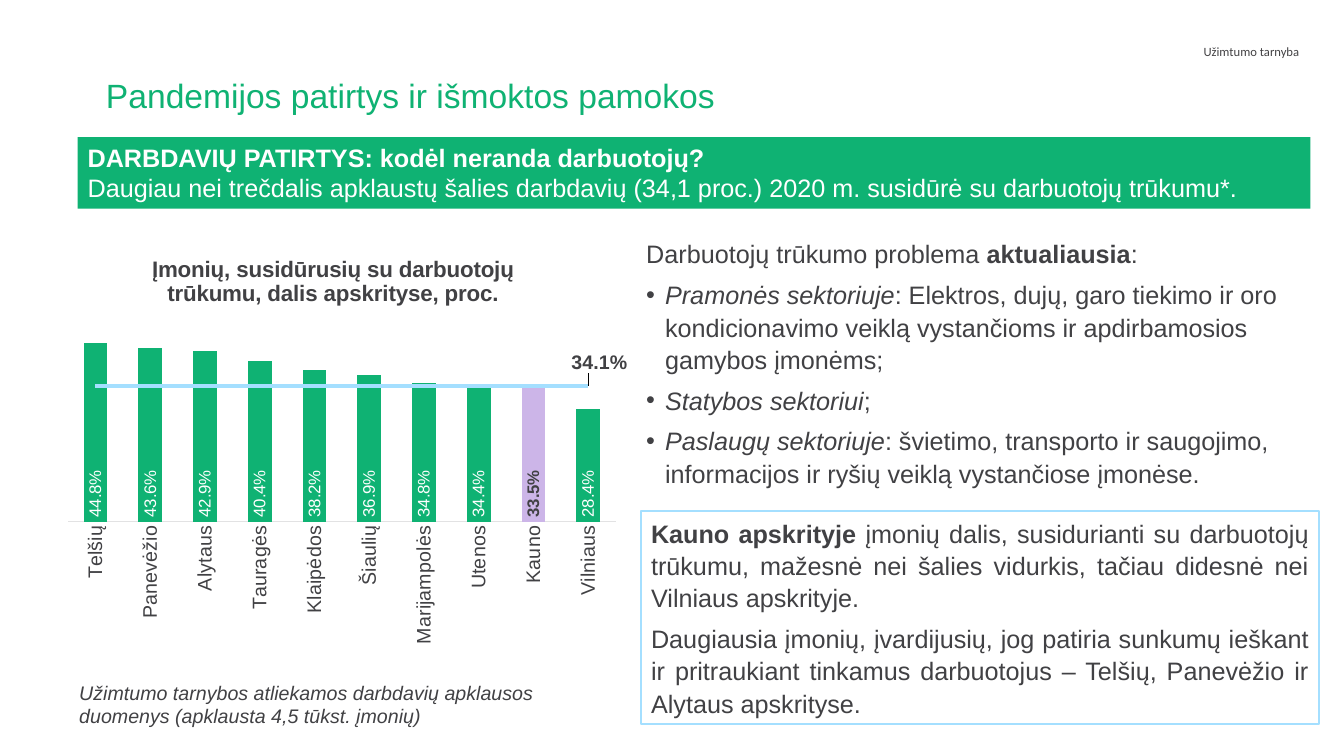
import lxml.etree
import pptx
import pptx.chart.data
import pptx.dml.color
import pptx.enum.chart
import pptx.enum.shapes
import pptx.enum.text
import pptx.oxml
import pptx.oxml.ns
import pptx.util

Pt = pptx.util.Pt
qn = pptx.oxml.ns.qn
ALIGN = pptx.enum.text.PP_ALIGN

GREEN, BLUE, LILAC = "0FB273", "A4DFFF", "CCB5E8"
TEXT, WHITE, AXIS = "414144", "FFFFFF", "E2E2E3"

COUNTIES = ["Telšių", "Panevėžio", "Alytaus", "Tauragės", "Klaipėdos",
            "Šiaulių", "Marijampolės", "Utenos", "Kauno", "Vilniaus"]
SHARES = [0.448, 0.436, 0.429, 0.404, 0.382, 0.369, 0.348, 0.344, 0.335, 0.284]
AVERAGE = 0.341
KAUNAS = COUNTIES.index("Kauno")


def color(value):
    return pptx.dml.color.RGBColor.from_string(value)


def chart_xml(content):
    """Build a chart element, with its namespaces declared."""
    name, rest = content[1:].split(">", 1)
    return pptx.oxml.parse_xml(f"<{name} {pptx.oxml.ns.nsdecls('c', 'a')}>{rest}")


def box_xml(line):
    """White fill with the given outline content."""
    return chart_xml(f'<c:spPr><a:solidFill><a:srgbClr val="{WHITE}"/></a:solidFill>'
                     f'<a:ln>{line}</a:ln></c:spPr>')


def layout_xml(x, y, size=None, edge=True):
    """Manual chart layout, as fractions of the chart."""
    parts = '<c:layoutTarget val="inner"/>' if size else ""
    if edge:
        parts += '<c:xMode val="edge"/><c:yMode val="edge"/>'
    parts += f'<c:x val="{x}"/><c:y val="{y}"/>'
    if size:
        parts += f'<c:w val="{size[0]}"/><c:h val="{size[1]}"/>'
    return chart_xml(f"<c:layout><c:manualLayout>{parts}</c:manualLayout></c:layout>")


def remove_children(element, tag):
    for child in element.findall(qn(tag)):
        element.remove(child)


def turn_text(element):
    for body in element.xpath(".//a:bodyPr"):
        body.set("rot", "-5400000")
        body.set("vert", "horz")


class SlideBuilder:
    """Holds the text style and the current slide."""

    def __init__(self, slide, font="Arial", size=18):
        self.slide, self.font, self.size = slide, font, size

    def style(self, font, size=None, hue=TEXT, bold=False, italic=False, name=None):
        font.name = name or self.font
        font.size = Pt(size or self.size)
        font.bold, font.italic = bold, italic
        font.color.rgb = color(hue)

    def fill_text(self, frame, paragraphs, align=ALIGN.LEFT, spacing=None, after=None,
                  bullets=(), **style):
        """Fill a frame; each paragraph is a list of (text, marks), marks from 'bi'."""
        frame.word_wrap = True
        frame.vertical_anchor = pptx.enum.text.MSO_ANCHOR.TOP
        frame.text = "\n".join("" for _ in paragraphs)
        for index, (paragraph, pieces) in enumerate(zip(frame.paragraphs, paragraphs)):
            if index in bullets:
                properties = paragraph._p.get_or_add_pPr()
                properties.set("marL", str(Pt(13.5)))
                properties.set("indent", str(-Pt(13.5)))
                lxml.etree.SubElement(properties, qn("a:buFont")).set("typeface", "Arial")
                lxml.etree.SubElement(properties, qn("a:buChar")).set("char", "•")
            paragraph.alignment = ALIGN.LEFT if index in bullets else align
            if spacing:
                paragraph.line_spacing = spacing
            if after:
                paragraph.space_after = Pt(after)
            for text, marks in pieces:
                run = paragraph.add_run()
                run.text = text
                self.style(run.font, bold="b" in marks, italic="i" in marks, **style)

    def title(self, text, box):
        title = self.slide.shapes.title
        title.left, title.top, title.width, title.height = map(Pt, box)
        self.fill_text(title.text_frame, [[(text, "")]], spacing=0.9, size=24, hue=GREEN)
        title.text_frame.auto_size = pptx.enum.text.MSO_AUTO_SIZE.NONE

    def text(self, box, paragraphs, **options):
        shape = self.slide.shapes.add_textbox(*map(Pt, box))
        self.fill_text(shape.text_frame, paragraphs, **options)

    def panel(self, box, paragraphs, fill=None, line=None, **options):
        shape = self.slide.shapes.add_shape(
            pptx.enum.shapes.MSO_SHAPE.RECTANGLE, *map(Pt, box))
        shape.shadow.inherit = False
        if fill:
            shape.fill.solid()
            shape.fill.fore_color.rgb = color(fill)
        else:
            shape.fill.background()
        if line:
            shape.line.color.rgb = color(line)
            shape.line.width = Pt(1.25)
        else:
            shape.line.fill.background()
        self.fill_text(shape.text_frame, paragraphs, **options)

    def county_chart(self, box, heading):
        data = pptx.chart.data.CategoryChartData(number_format="0.0%")
        data.categories = COUNTIES
        data.add_series("Series 1", SHARES)
        data.add_series("Series 2", [AVERAGE] * len(COUNTIES))
        chart = self.slide.shapes.add_chart(
            pptx.enum.chart.XL_CHART_TYPE.COLUMN_CLUSTERED, *map(Pt, box), data).chart
        chart.has_legend = False
        self.style(chart.font, size=14)
        chart._chartSpace.find(qn("c:txPr")).addprevious(box_xml("<a:noFill/>"))

        chart.has_title = True
        chart.chart_title.text_frame.text = heading
        self.style(chart.chart_title.text_frame.paragraphs[0].runs[0].font,
                   size=16, bold=True)
        title = chart.chart_title._element
        remove_children(title, "c:layout")
        title.find(qn("c:tx")).addnext(layout_xml(0.16, 0.04))

        self.chart_axes(chart)
        self.average_line(chart)
        self.county_columns(chart.plots[0])

    def chart_axes(self, chart):
        none = pptx.enum.chart.XL_TICK_MARK.NONE
        axis = chart.category_axis
        axis.major_tick_mark = axis.minor_tick_mark = none
        axis.format.line.color.rgb = color(AXIS)
        axis.format.line.width = Pt(0.75)
        self.style(axis.tick_labels.font, size=14)
        turn_text(axis._element)
        values = chart.value_axis
        values.visible = values.has_major_gridlines = False
        values.minimum_scale, values.maximum_scale = 0, 0.5

    def average_line(self, chart):
        """Move the second series to a line plot and label its last point."""
        bars = chart.plots[0]._element
        area = bars.getparent()
        remove_children(area, "c:layout")
        area.insert(0, layout_xml(0.02, 0.21, size=(0.96, 0.47)))
        axes = "".join(f'<c:axId val="{axis.get("val")}"/>'
                       for axis in bars.findall(qn("c:axId")))
        line_plot = chart_xml('<c:lineChart><c:grouping val="standard"/>'
                              f'<c:varyColors val="0"/>{axes}</c:lineChart>')
        bars.addnext(line_plot)
        moved = bars.findall(qn("c:ser"))[1]
        remove_children(moved, "c:invertIfNegative")
        line_plot.insert(2, moved)

        series = chart.plots[1].series[0]
        series.smooth = False
        series.format.line.color.rgb = color(BLUE)
        series.format.line.width = Pt(2.25)
        series.marker.style = pptx.enum.chart.XL_MARKER_STYLE.NONE
        series.data_labels.show_value = False
        label = series.points[len(COUNTIES) - 1].data_label
        self.style(label.font, size=14, bold=True)
        label.position = pptx.enum.chart.XL_LABEL_POSITION.ABOVE
        element = moved.find(".//" + qn("c:dLbl"))
        element.find(qn("c:idx")).addnext(layout_xml(0.02, -0.02, edge=False))
        remove_children(element, "c:spPr")
        element.find(qn("c:txPr")).addprevious(
            box_xml(f'<a:solidFill><a:srgbClr val="{LILAC}"/></a:solidFill>'))

    def county_columns(self, plot):
        plot.gap_width = 130
        plot.vary_by_categories = False
        series = plot.series[0]
        kaunas = series.points[KAUNAS]
        for columns, hue in ((series, GREEN), (kaunas, LILAC)):
            columns.format.fill.solid()
            columns.format.fill.fore_color.rgb = color(hue)
        labels = series.data_labels
        labels.show_value = True
        labels.number_format, labels.number_format_is_linked = "0.0%", False
        self.style(labels.font, size=12, hue=WHITE)
        self.style(kaunas.data_label.font, size=12, bold=True)
        for label in (labels, kaunas.data_label):
            label.position = pptx.enum.chart.XL_LABEL_POSITION.INSIDE_BASE
        turn_text(series._element)


def main():
    presentation = pptx.Presentation()
    presentation.slide_width, presentation.slide_height = Pt(960), Pt(540)
    builder = SlideBuilder(presentation.slides.add_slide(presentation.slide_layouts[5]))
    body = {"align": ALIGN.JUSTIFY, "spacing": 1.07, "after": 6}

    builder.text((611, 28, 324, 34), [[("Užimtumo tarnyba", "")]],
                 align=ALIGN.RIGHT, size=9, hue="434244", name="Calibri")
    builder.title("Pandemijos patirtys ir išmoktos pamokos", (68.5, 53.5, 823.5, 54))
    builder.panel((55.5, 98, 880.5, 51), [
        [("DARBDAVIŲ PATIRTYS: kodėl neranda darbuotojų?", "b")],
        [("Daugiau nei trečdalis apklaustų šalies darbdavių (34,1 proc.) 2020 m. "
          "susidūrė su darbuotojų trūkumu*.", "")]], fill=GREEN, hue=WHITE)
    builder.panel((458, 365, 484, 152), [
        [("Kauno apskrityje ", "b"),
         ("įmonių dalis, susidurianti su darbuotojų trūkumu, mažesnė nei šalies "
          "vidurkis, tačiau didesnė nei Vilniaus apskrityje.", "")],
        [("Daugiausia įmonių, įvardijusių, jog patiria sunkumų ieškant ir pritraukiant "
          "tinkamus darbuotojus – Telšių, Panevėžio ir Alytaus apskrityse.", "")]],
        line=BLUE, **body)
    builder.county_chart((40.5, 167, 408, 302.5), "Įmonių, susidūrusių su darbuotojų "
                         "trūkumu, dalis apskrityse, proc.")
    builder.text((454.5, 165.5, 484, 187), [
        [("Darbuotojų trūkumo problema ", ""), ("aktualiausia", "b"), (":", "")],
        [("Pramonės sektoriuje", "i"),
         (": Elektros, dujų, garo tiekimo ir oro kondicionavimo veiklą vystančioms "
          "ir apdirbamosios gamybos įmonėms;", "")],
        [("Statybos sektoriui", "i"), (";", "")],
        [("Paslaugų sektoriuje", "i"),
         (": švietimo, transporto ir saugojimo, informacijos ir ryšių veiklą "
          "vystančiose įmonėse.", "")]], bullets=(1, 2, 3), **body)
    builder.text((49.5, 482.5, 389.5, 41), [
        [("Užimtumo tarnybos atliekamos darbdavių apklausos duomenys "
          "(apklausta 4,5 tūkst. įmonių)", "i")]], size=14)
    presentation.save("out.pptx")


if __name__ == "__main__":
    main()
